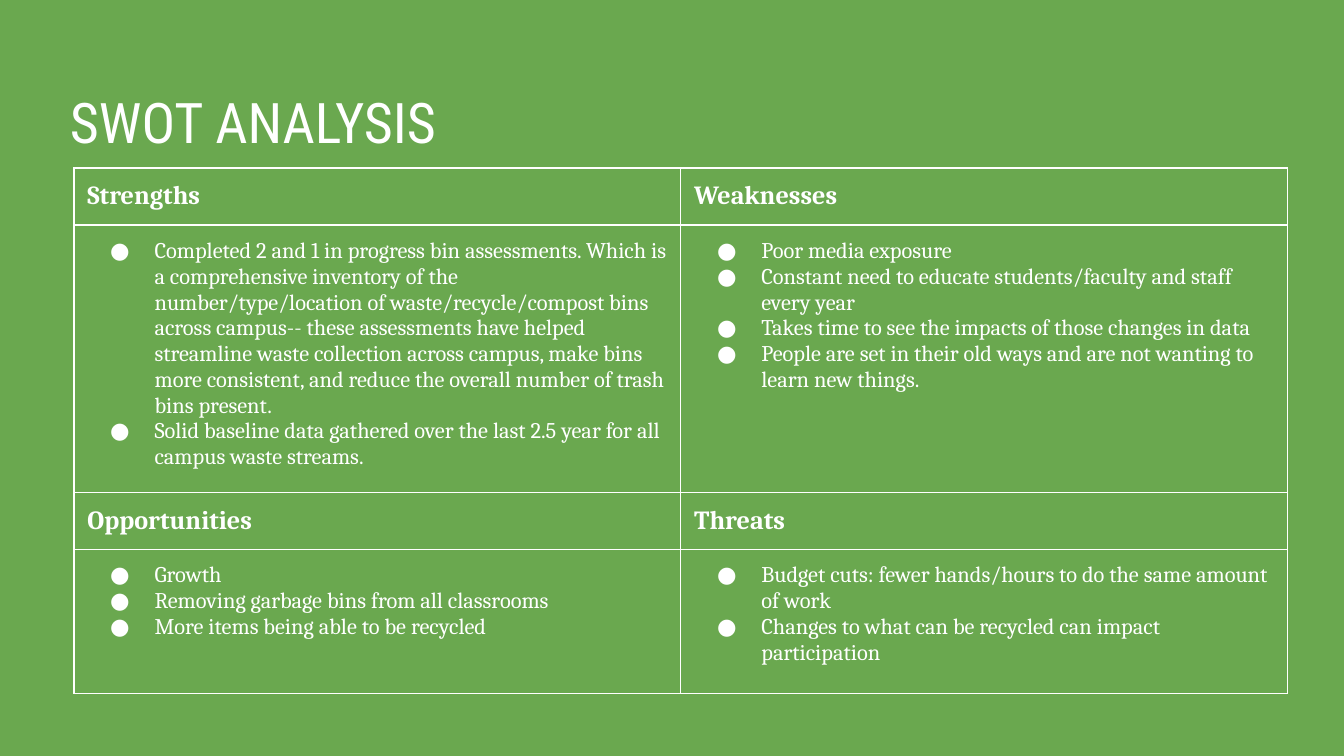
from dataclasses import dataclass

from lxml.etree import SubElement
from pptx import Presentation
from pptx.dml.color import RGBColor
from pptx.enum.text import MSO_ANCHOR, MSO_AUTO_SIZE, PP_ALIGN
from pptx.oxml import parse_xml
from pptx.oxml.ns import nsdecls, qn
from pptx.table import _Cell as Cell
from pptx.text.text import _Paragraph as Paragraph
from pptx.util import Inches, Pt

COLORS = {"background": "6AA84F", "text": "FFFFFF", "border": "FFFFFF"}
TITLE_FONT = "Roboto Condensed"
BODY_FONT = "Cambria"
TABLE_WIDTH = 9.03
HEADING_HEIGHT = 0.39
PADDING = Inches(0.1)


@dataclass(frozen=True)
class Quadrant:
    heading: str
    points: tuple[str, ...]


@dataclass(frozen=True)
class Band:
    body_height: float
    quadrants: tuple[Quadrant, Quadrant]


BANDS = (
    Band(1.99, (
        Quadrant("Strengths", (
            "Completed 2 and 1 in progress bin assessments. Which is a comprehensive "
            "inventory of the number/type/location of waste/recycle/compost bins across "
            "campus-- these assessments have helped streamline waste collection across "
            "campus, make bins more consistent, and reduce the overall number of trash "
            "bins present.",
            "Solid baseline data gathered over the last 2.5 year for all campus waste streams.",
        )),
        Quadrant("Weaknesses", (
            "Poor media exposure",
            "Constant need to educate students/faculty and staff every year",
            "Takes time to see the impacts of those changes in data",
            "People are set in their old ways and are not wanting to learn new things.",
        )),
    )),
    Band(1.07, (
        Quadrant("Opportunities", (
            "Growth",
            "Removing garbage bins from all classrooms",
            "More items being able to be recycled",
        )),
        Quadrant("Threats", (
            "Budget cuts: fewer hands/hours to do the same amount of work",
            "Changes to what can be recycled can impact participation",
        )),
    )),
)


def format_runs(paragraph: Paragraph, font: str, size: float, bold: bool = False) -> None:
    for run in paragraph.runs:
        run.font.name = font
        run.font.size = Pt(size)
        run.font.bold = bold
        run.font.color.rgb = RGBColor.from_string(COLORS["text"])


def add_bullet(paragraph: Paragraph) -> None:
    properties = paragraph._p.get_or_add_pPr()
    properties.set("marL", str(Inches(0.5)))
    properties.set("indent", str(Inches(-0.33)))
    bullet_color = SubElement(properties, qn("a:buClr"))
    SubElement(bullet_color, qn("a:srgbClr"), val=COLORS["text"])
    SubElement(properties, qn("a:buFont"), typeface=BODY_FONT)
    SubElement(properties, qn("a:buChar"), char="●")


def style_cell(cell: Cell) -> None:
    cell.fill.background()
    cell.margin_left = cell.margin_right = PADDING
    cell.margin_top = cell.margin_bottom = PADDING
    cell.vertical_anchor = MSO_ANCHOR.TOP
    properties = cell._tc.get_or_add_tcPr()
    for position, side in enumerate(("lnL", "lnR", "lnT", "lnB")):
        border = parse_xml(
            f'<a:{side} {nsdecls("a")} w="{Pt(0.75)}"><a:solidFill>'
            f'<a:srgbClr val="{COLORS["border"]}"/></a:solidFill></a:{side}>'
        )
        properties.insert(position, border)


def fill_quadrant(heading: Cell, body: Cell, quadrant: Quadrant) -> None:
    heading.text_frame.text = quadrant.heading
    format_runs(heading.text_frame.paragraphs[0], BODY_FONT, 14, bold=True)
    body.text_frame.text = "\n".join(quadrant.points)
    for paragraph in body.text_frame.paragraphs:
        add_bullet(paragraph)
        format_runs(paragraph, BODY_FONT, 12)
    style_cell(heading)
    style_cell(body)


def add_title(slide, text: str) -> None:
    title = slide.shapes.title
    title.left, title.top = Inches(0.42), Inches(0.5)
    title.width, title.height = Inches(9.15), Inches(0.75)
    frame = title.text_frame
    frame.text = text
    frame.word_wrap = True
    frame.auto_size = MSO_AUTO_SIZE.NONE
    frame.vertical_anchor = MSO_ANCHOR.BOTTOM
    frame.margin_left = frame.margin_right = PADDING
    frame.margin_top = frame.margin_bottom = PADDING
    frame.paragraphs[0].alignment = PP_ALIGN.LEFT
    format_runs(frame.paragraphs[0], TITLE_FONT, 30)


def add_swot_table(slide, bands: tuple[Band, ...]) -> None:
    height = sum(HEADING_HEIGHT + band.body_height for band in bands)
    swot = slide.shapes.add_table(
        2 * len(bands), 2,
        Inches(0.55), Inches(1.25), Inches(TABLE_WIDTH), Inches(height),
    ).table
    swot.first_row = swot.horz_banding = False
    for index, band in enumerate(bands):
        heading_row, body_row = 2 * index, 2 * index + 1
        swot.rows[heading_row].height = Inches(HEADING_HEIGHT)
        swot.rows[body_row].height = Inches(band.body_height)
        for column, quadrant in enumerate(band.quadrants):
            fill_quadrant(
                swot.cell(heading_row, column), swot.cell(body_row, column), quadrant
            )


def main() -> None:
    deck = Presentation()
    deck.slide_width = Inches(10)
    deck.slide_height = deck.slide_width * 9 // 16
    slide = deck.slides.add_slide(deck.slide_layouts[5])
    background = slide.background.fill
    background.solid()
    background.fore_color.rgb = RGBColor.from_string(COLORS["background"])
    add_title(slide, "SWOT ANALYSIS")
    add_swot_table(slide, BANDS)
    deck.save("out.pptx")


if __name__ == "__main__":
    main()
